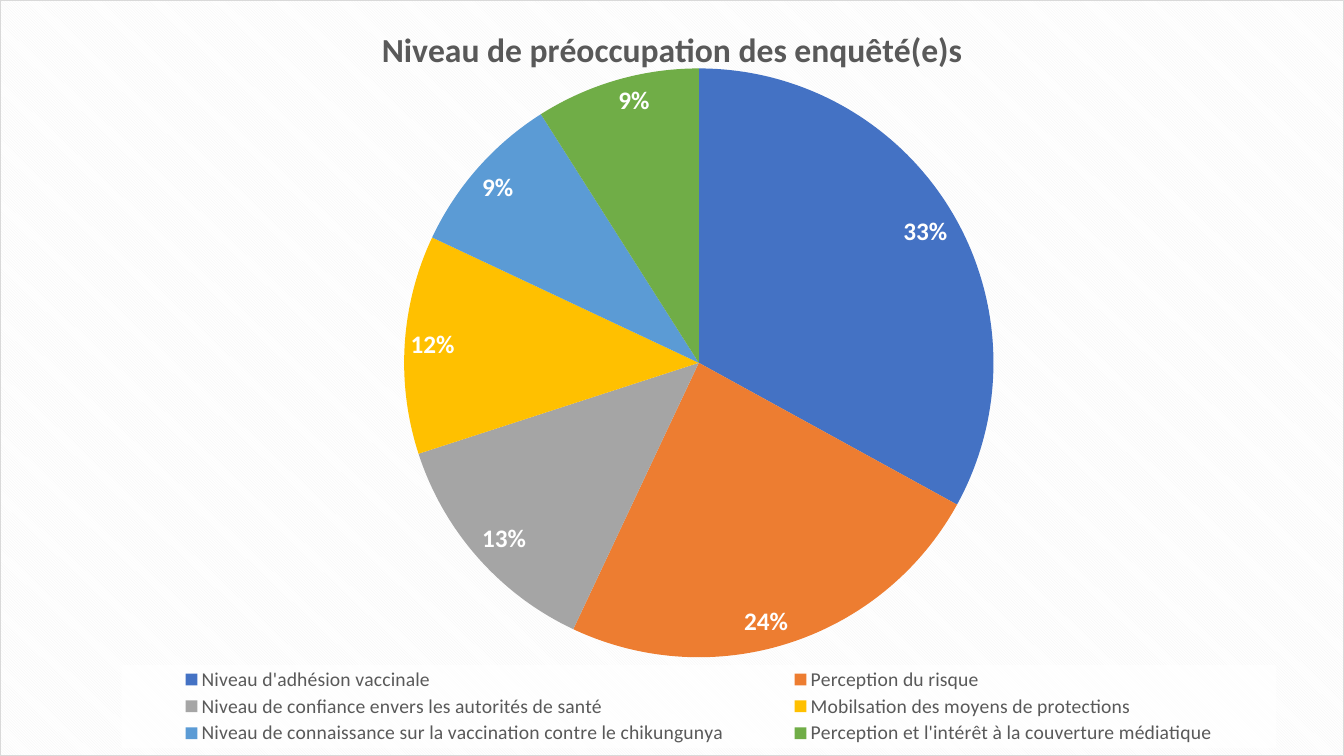
from dataclasses import dataclass
from typing import NamedTuple

from lxml.etree import _Element as Element
from pptx import Presentation
from pptx.chart.chart import Chart
from pptx.chart.data import CategoryChartData
from pptx.dml.color import RGBColor
from pptx.enum.chart import XL_CHART_TYPE as ChartType
from pptx.enum.chart import XL_LABEL_POSITION as LabelPosition
from pptx.enum.chart import XL_LEGEND_POSITION as LegendPosition
from pptx.oxml import parse_xml
from pptx.oxml.ns import nsdecls, qn
from pptx.text.text import Font
from pptx.util import Inches, Pt


@dataclass(frozen=True)
class Theme:
    font: str = "Calibri"
    text: str = "595959"
    white: str = "FFFFFF"
    stripe: str = "F2F2F2"
    border: str = "D9D9D9"
    title_size: int = 24
    label_size: int = 18
    legend_size: int = 14
    base_size: int = 10


class Slice(NamedTuple):
    topic: str
    percent: int
    color: str


class Area(NamedTuple):
    """Fractions of the chart's width and height."""
    x: float
    y: float
    w: float
    h: float


THEME = Theme()
WIDTH, HEIGHT = Inches(13.33), Inches(7.5)
TITLE = "Niveau de préoccupation des enquêté(e)s"
PIE_AREA = Area(0.2, 0.09, 0.64, 0.78)
LEGEND_AREA = Area(0.09, 0.88, 0.86, 0.11)
SLICES = [
    Slice("Niveau d'adhésion vaccinale", 33, "4472C4"),
    Slice("Perception du risque", 24, "ED7D31"),
    Slice("Niveau de confiance envers les autorités de santé", 13, "A5A5A5"),
    Slice("Mobilsation des moyens de protections", 12, "FFC000"),
    Slice("Niveau de connaissance sur la vaccination contre le chikungunya", 9, "5B9BD5"),
    Slice("Perception et l'intérêt à la couverture médiatique", 9, "70AD47"),
]


def style_font(font: Font, size: int, color: str, bold: bool = False) -> None:
    font.name = THEME.font
    font.size = Pt(size)
    font.bold = bold
    font.color.rgb = RGBColor.from_string(color)


def manual_layout(area: Area, inner: bool = False) -> Element:
    target = '<c:layoutTarget val="inner"/>' if inner else ""
    modes = "".join(f'<c:{side}Mode val="edge"/>' for side in "xy")
    values = "".join(f'<c:{name} val="{value}"/>' for name, value in area._asdict().items())
    return parse_xml(
        f'<c:layout {nsdecls("c")}><c:manualLayout>{target}{modes}{values}'
        "</c:manualLayout></c:layout>"
    )


def shape_properties(content: str) -> Element:
    return parse_xml(f'<c:spPr {nsdecls("c", "a")}>{content}</c:spPr>')


def remove_layout(parent: Element) -> None:
    for layout in parent.findall(qn("c:layout")):
        parent.remove(layout)


def style_chart_area(chart: Chart) -> None:
    """Give the chart a striped background, a thin border and a fixed pie area."""
    chart_space = chart.element
    chart_element = chart_space.find(qn("c:chart"))
    chart_element.addnext(shape_properties(
        '<a:pattFill prst="dkDnDiag">'
        f'<a:fgClr><a:srgbClr val="{THEME.stripe}"/></a:fgClr>'
        f'<a:bgClr><a:srgbClr val="{THEME.white}"/></a:bgClr></a:pattFill>'
        f'<a:ln w="{Pt(0.75)}"><a:solidFill><a:srgbClr val="{THEME.border}"/>'
        "</a:solidFill></a:ln>"
    ))
    plot_area = chart_element.find(qn("c:plotArea"))
    remove_layout(plot_area)
    plot_area.insert(0, manual_layout(PIE_AREA, inner=True))


def style_title(chart: Chart) -> None:
    chart.has_title = True
    text_frame = chart.chart_title.text_frame
    text_frame.text = TITLE
    style_font(text_frame.paragraphs[0].runs[0].font, THEME.title_size, THEME.text, bold=True)


def style_slices(chart: Chart) -> None:
    plot = chart.plots[0]
    plot.vary_by_categories = True
    for index, item in enumerate(SLICES):
        point_format = plot.series[0].points[index].format
        point_format.fill.solid()
        point_format.fill.fore_color.rgb = RGBColor.from_string(item.color)
        point_format.line.fill.background()
    labels = plot.series[0].data_labels
    labels.show_value = False
    labels.show_percentage = True
    labels.number_format = "0%"
    labels.number_format_is_linked = False
    labels.position = LabelPosition.INSIDE_END
    style_font(labels.font, THEME.label_size, THEME.white, bold=True)


def style_legend(chart: Chart) -> None:
    chart.has_legend = True
    legend = chart.legend
    legend.position = LegendPosition.BOTTOM
    legend.include_in_layout = False
    style_font(legend.font, THEME.legend_size, THEME.text)
    element = chart.element.find(f'{qn("c:chart")}/{qn("c:legend")}')
    remove_layout(element)
    element.find(qn("c:legendPos")).addnext(manual_layout(LEGEND_AREA))
    element.find(qn("c:overlay")).addnext(shape_properties(
        f'<a:solidFill><a:srgbClr val="{THEME.white}"><a:alpha val="78000"/>'
        "</a:srgbClr></a:solidFill>"
    ))


def main() -> None:
    presentation = Presentation()
    presentation.slide_width, presentation.slide_height = WIDTH, HEIGHT
    slide = presentation.slides.add_slide(presentation.slide_layouts[6])

    data = CategoryChartData()
    data.categories = [item.topic for item in SLICES]
    data.add_series("Préoccupation", [item.percent for item in SLICES])
    chart = slide.shapes.add_chart(ChartType.PIE, 0, 0, WIDTH, HEIGHT, data).chart
    style_font(chart.font, THEME.base_size, "000000")
    style_chart_area(chart)
    style_title(chart)
    style_slices(chart)
    style_legend(chart)

    presentation.save("out.pptx")


if __name__ == "__main__":
    main()
